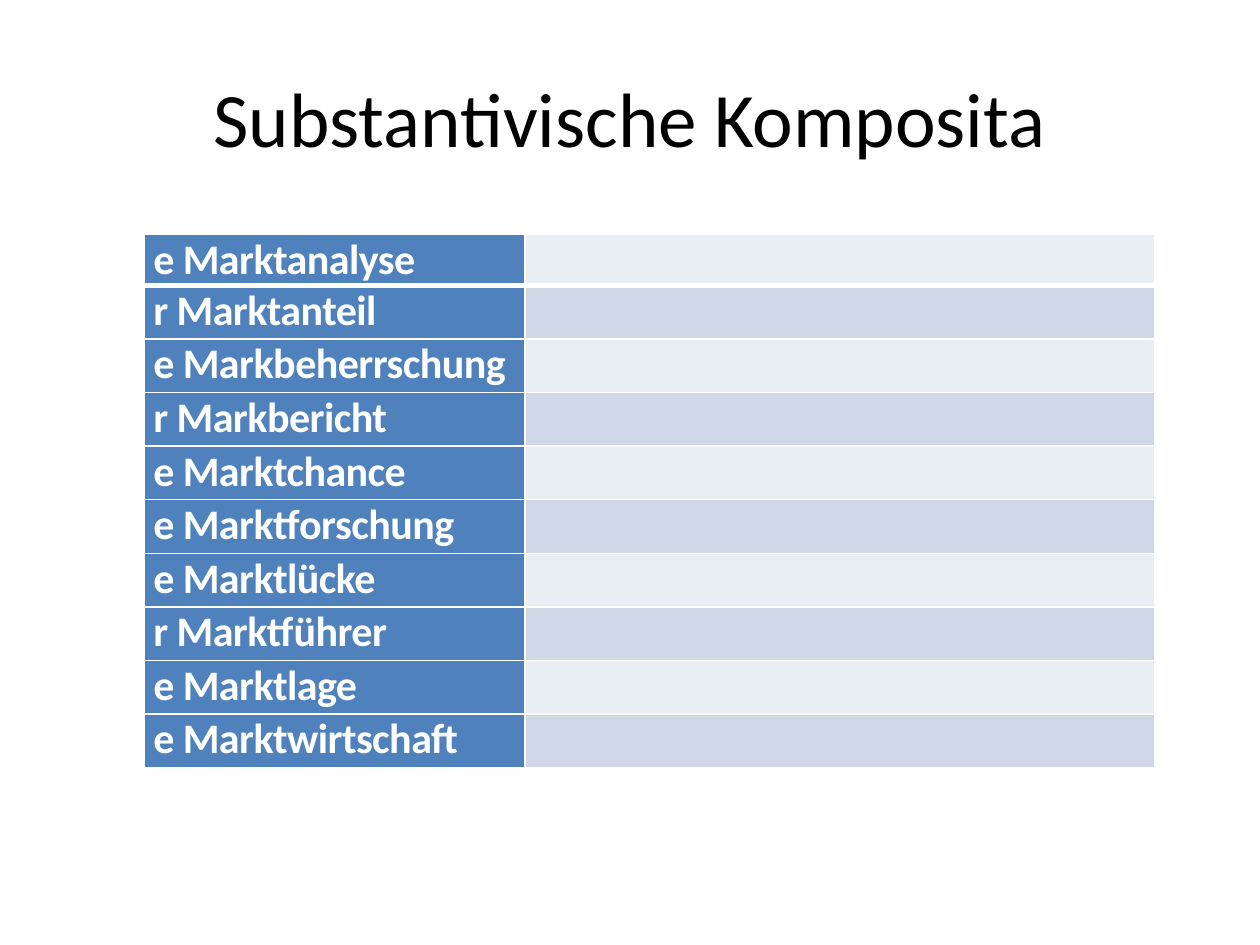
from lxml.etree import SubElement
from pptx import Presentation
from pptx.dml.color import RGBColor
from pptx.enum.text import MSO_ANCHOR, PP_ALIGN
from pptx.oxml.ns import qn
from pptx.util import Cm, Pt

COMPOUNDS = [
    "e Marktanalyse", "r Marktanteil", "e Markbeherrschung", "r Markbericht",
    "e Marktchance", "e Marktforschung", "e Marktlücke", "r Marktführer",
    "e Marktlage", "e Marktwirtschaft",
]


def color(value):
    return RGBColor.from_string(value)


class SlideBuilder:
    font = "Calibri"
    ink, white, blue = "000000", "FFFFFF", "4F81BD"
    bands = ("E9EDF4", "D0D8E8")

    def __init__(self, prs):
        self.s = prs.slides.add_slide(prs.slide_layouts[5])

    def run(self, p, text, size, ink, bold=False):
        r = p.add_run()
        r.text = text
        r.font.name, r.font.size, r.font.bold = self.font, Pt(size), bold
        r.font.color.rgb = color(ink)
        return r

    def title(self, text, left, top, width, height):
        sp = self.s.shapes.title
        sp.left, sp.top, sp.width, sp.height = map(Cm, (left, top, width, height))
        tf = sp.text_frame
        tf.vertical_anchor = MSO_ANCHOR.MIDDLE
        p = tf.paragraphs[0]
        p.alignment = PP_ALIGN.CENTER
        self.run(p, text, 44, self.ink)

    def borders(self, cell, **widths):
        """Draw white cell edges; widths in points are keyed L, R, T, B."""
        tc_pr = cell._tc.get_or_add_tcPr()
        for side, width in widths.items():
            ln = SubElement(tc_pr, qn(f"a:ln{side}"), w=str(Pt(width)))
            fill = SubElement(ln, qn("a:solidFill"))
            SubElement(fill, qn("a:srgbClr"), val=self.white)

    def fill(self, cell, value):
        cell.fill.solid()
        cell.fill.fore_color.rgb = color(value)

    def word_table(self, words, left, top, col_widths, first_height, row_height):
        """List the words in the first column and leave the second one empty."""
        heights = [first_height] + [row_height] * (len(words) - 1)
        table = self.s.shapes.add_table(
            len(words), len(col_widths), Cm(left), Cm(top),
            Cm(sum(col_widths)), Cm(sum(heights))).table
        table.first_row = table.horz_banding = False
        for column, width in zip(table.columns, col_widths):
            column.width = Cm(width)
        for i, (row, height, word) in enumerate(zip(table.rows, heights, words)):
            row.height = Cm(height)
            for cell in row.cells:
                cell.margin_left = cell.margin_right = Cm(0.18)
                cell.margin_top = cell.margin_bottom = 0
                self.borders(cell, L=1, R=1, T=3 if i == 1 else 1,
                             B=3 if i == 0 else 1)
            word_cell, blank_cell = row.cells
            self.fill(word_cell, self.blue)
            self.fill(blank_cell, self.bands[i % 2])
            p = word_cell.text_frame.paragraphs[0]
            p.alignment = PP_ALIGN.JUSTIFY
            r = self.run(p, word, 24, self.white, bold=True)
            r.font._element.set("spc", "-30")


def main():
    prs = Presentation()
    prs.slide_width, prs.slide_height = Cm(25.4), Cm(19.05)
    slide = SlideBuilder(prs)
    slide.title("Substantivische Komposita", 1.27, 0.76, 22.86, 3.18)
    slide.word_table(COMPOUNDS, 2.91, 4.72, (7.67, 12.7), 1.02, 1.08)
    prs.save("out.pptx")


if __name__ == "__main__":
    main()
